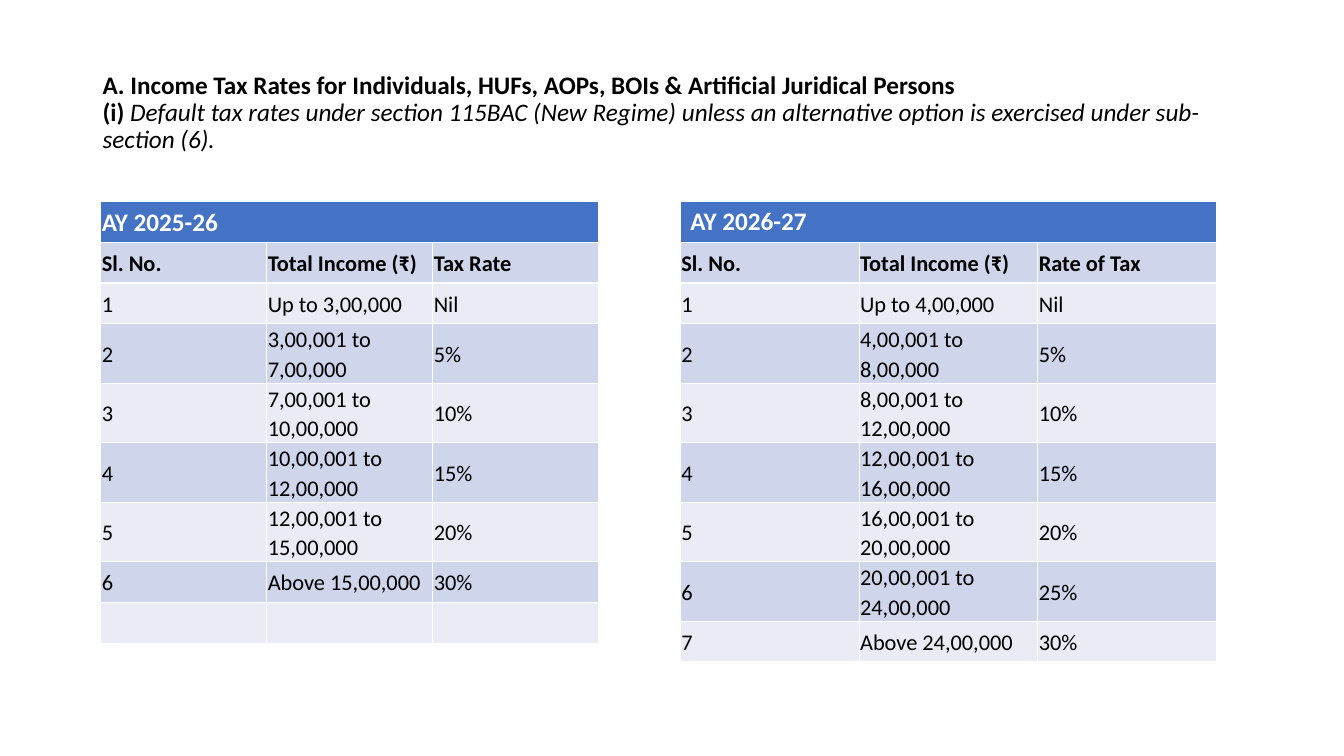
"""Build a slide comparing default income tax slabs for two assessment years."""
from pptx import Presentation
from pptx.dml.color import RGBColor
from pptx.enum import text
from pptx.util import Pt

FONT = "Calibri"
BLACK = RGBColor(0x00, 0x00, 0x00)
WHITE = RGBColor(0xFF, 0xFF, 0xFF)
HEADER_BLUE = RGBColor(0x44, 0x72, 0xC4)
BANDS = (RGBColor(0xCF, 0xD5, 0xEA), RGBColor(0xE9, 0xEB, 0xF5))
ROW_HEIGHT = 29.1
TABLE_TOP = 144

SLABS_2025 = [
    ("Sl. No.", "Total Income (₹)", "Tax Rate"),
    ("1", "Up to 3,00,000", "Nil"),
    ("2", "3,00,001 to 7,00,000", "5%"),
    ("3", "7,00,001 to 10,00,000", "10%"),
    ("4", "10,00,001 to 12,00,000", "15%"),
    ("5", "12,00,001 to 15,00,000", "20%"),
    ("6", "Above 15,00,000", "30%"),
    ("", "", ""),
]
SLABS_2026 = [
    ("Sl. No.", "Total Income (₹)", "Rate of Tax"),
    ("1", "Up to 4,00,000", "Nil"),
    ("2", "4,00,001 to 8,00,000", "5%"),
    ("3", "8,00,001 to 12,00,000", "10%"),
    ("4", "12,00,001 to 16,00,000", "15%"),
    ("5", "16,00,001 to 20,00,000", "20%"),
    ("6", "20,00,001 to 24,00,000", "25%"),
    ("7", "Above 24,00,000", "30%"),
]


def add_run(paragraph, wording, size, color=BLACK, bold=False, italic=False):
    """Append one formatted run to a paragraph."""
    run = paragraph.add_run()
    run.text = wording
    font = run.font
    font.name, font.size, font.bold, font.italic = FONT, Pt(size), bold, italic
    font.color.rgb = color


def add_heading(slide):
    """Add the section heading with its italic explanation."""
    heading = slide.shapes.add_textbox(Pt(66.2), Pt(28.8), Pt(828), Pt(104.4))
    frame = heading.text_frame
    frame.word_wrap = True
    frame.vertical_anchor = text.MSO_ANCHOR.MIDDLE
    paragraph = frame.paragraphs[0]
    paragraph.line_spacing = 0.9
    add_run(paragraph, "A. Income Tax Rates for Individuals, HUFs, AOPs, BOIs & "
            "Artificial Juridical Persons", 18, bold=True)
    paragraph.add_line_break()
    add_run(paragraph, "(i) ", 18, bold=True)
    add_run(paragraph, "Default tax rates under section 115BAC (New Regime) unless an "
            "alternative option is exercised under sub-section (6).", 18, italic=True)


def set_tight(cell):
    """Centre a cell's text vertically, with narrow margins and loose lines."""
    cell.vertical_anchor = text.MSO_ANCHOR.MIDDLE
    cell.margin_left = cell.margin_right = Pt(0.72)
    cell.margin_top = cell.margin_bottom = Pt(0.72)
    paragraph = cell.text_frame.paragraphs[0]
    paragraph.line_spacing = 1.07
    paragraph.space_after = Pt(8)


def fill_cell(cell, color):
    """Give a cell a solid fill."""
    cell.fill.solid()
    cell.fill.fore_color.rgb = color


def add_slab_table(slide, left, column_width, year, slabs, tight_year):
    """Add one assessment year's banded table under a merged year header."""
    row_count = len(slabs) + 1
    table = slide.shapes.add_table(
        row_count, 3, Pt(left), Pt(TABLE_TOP),
        Pt(3 * column_width), Pt(row_count * ROW_HEIGHT)).table
    for column in table.columns:
        column.width = Pt(column_width)
    for row in table.rows:
        row.height = Pt(ROW_HEIGHT)

    year_cell = table.cell(0, 0)
    year_cell.merge(table.cell(0, 2))
    fill_cell(year_cell, HEADER_BLUE)
    if tight_year:
        set_tight(year_cell)
    add_run(year_cell.text_frame.paragraphs[0], year, 18, WHITE, bold=True)

    for index, slab in enumerate(slabs):
        for column, wording in enumerate(slab):
            cell = table.cell(index + 1, column)
            fill_cell(cell, BANDS[index % 2])
            set_tight(cell)
            if wording:
                add_run(cell.text_frame.paragraphs[0], wording, 16, bold=index == 0)


def main():
    """Create the slide and save it."""
    deck = Presentation()
    deck.slide_width, deck.slide_height = Pt(960), Pt(540)
    slide = deck.slides.add_slide(deck.slide_layouts[6])
    add_heading(slide)
    add_slab_table(slide, 72, 118.6, "AY 2025-26", SLABS_2025, tight_year=True)
    add_slab_table(slide, 486, 127.7, "AY 2026-27", SLABS_2026, tight_year=False)
    deck.save("out.pptx")


if __name__ == "__main__":
    main()
